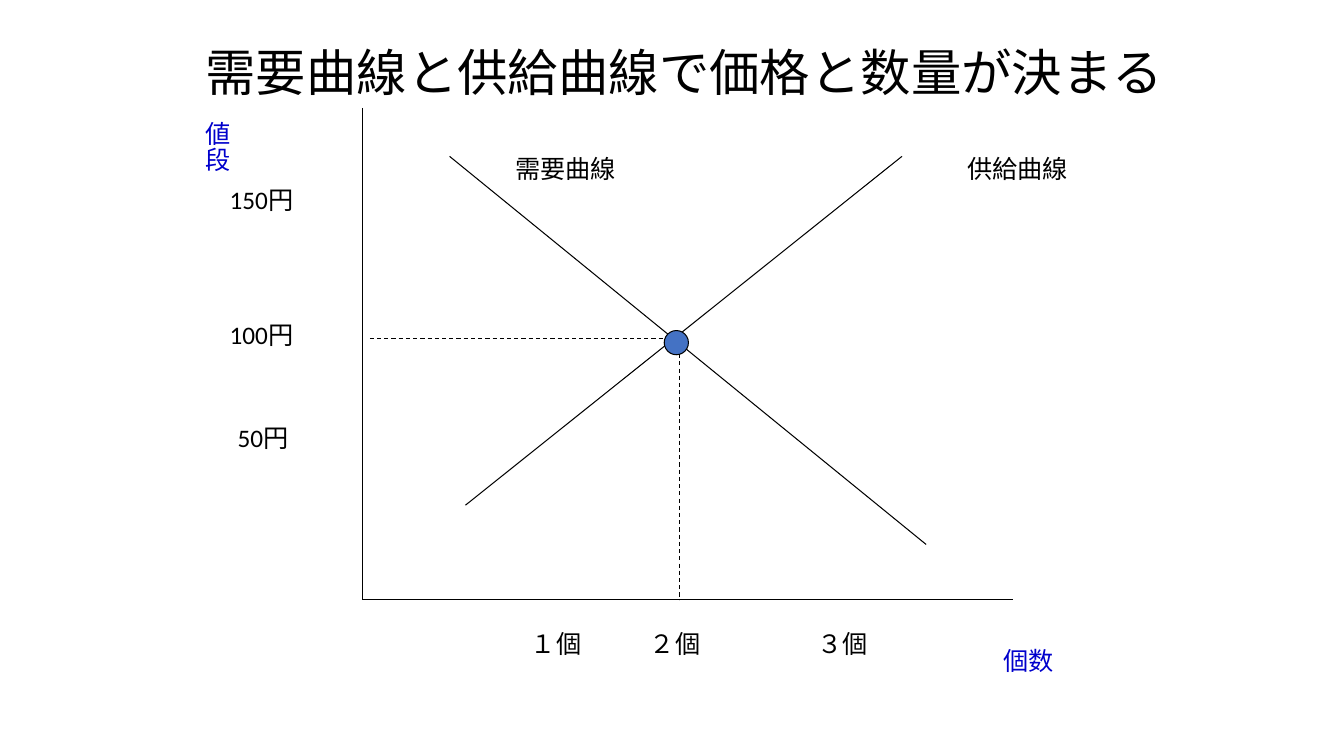
import pptx
import pptx.dml.color
import pptx.enum.dml
import pptx.enum.shapes
import pptx.enum.text
import pptx.oxml.ns
import pptx.util
from dataclasses import dataclass
from lxml import etree

Cm = pptx.util.Cm
Pt = pptx.util.Pt
Align = pptx.enum.text.PP_ALIGN


@dataclass(frozen=True)
class Theme:
    font: str = "Calibri"
    ink: str = "000000"
    axis_name: str = "0000CC"
    equilibrium: str = "4472C4"
    title_size: int = 36
    label_size: int = 18
    line_width: float = 0.75


@dataclass(frozen=True)
class Box:
    """A region of the slide, in centimetres."""
    left: float
    top: float
    width: float
    height: float

    def inside(self, x, y, width, height):
        return Box(self.left + x, self.top + y, width, height)

    def lengths(self):
        return [Cm(v) for v in (self.left, self.top, self.width, self.height)]


THEME = Theme()
LABEL_HEIGHT = 1.02


def rgb(code):
    return pptx.dml.color.RGBColor.from_string(code)


def add_label(slide, box, text, size=THEME.label_size, color=THEME.ink,
              align=Align.LEFT, vertical=False):
    frame = slide.shapes.add_textbox(*box.lengths()).text_frame
    frame.word_wrap = True
    frame.auto_size = pptx.enum.text.MSO_AUTO_SIZE.SHAPE_TO_FIT_TEXT
    frame.text = text
    if vertical:
        frame._txBody.bodyPr.set("vert", "eaVert")
    paragraph = frame.paragraphs[0]
    paragraph.alignment = align
    font = paragraph.runs[0].font
    font.name = THEME.font
    font.size = Pt(size)
    font.color.rgb = rgb(color)


def add_line(slide, box, start, end, dashed=False):
    """Draw a line between two points given relative to the box."""
    (x1, y1), (x2, y2) = start, end
    line = slide.shapes.add_connector(
        pptx.enum.shapes.MSO_CONNECTOR.STRAIGHT,
        Cm(box.left + x1), Cm(box.top + y1), Cm(box.left + x2), Cm(box.top + y2))
    line.line.color.rgb = rgb(THEME.ink)
    line.line.width = Pt(THEME.line_width)
    if dashed:
        line.line.dash_style = pptx.enum.dml.MSO_LINE.DASH
    etree.SubElement(line._element.spPr, pptx.oxml.ns.qn("a:effectLst"))


def add_title(slide, box):
    add_label(slide, box, "需要曲線と供給曲線で価格と数量が決まる", THEME.title_size)


def add_axes(slide, plot):
    origin = (0, plot.height)
    add_line(slide, plot, (0, 0), origin)
    add_line(slide, plot, origin, (plot.width, plot.height))

    # Axis names
    add_label(slide, plot.inside(14.58, 13.41, 4.39, LABEL_HEIGHT), "個数",
              color=THEME.axis_name, align=Align.CENTER)
    add_label(slide, plot.inside(-4.44, 0.1, 1.27, 1.8), "値段",
              color=THEME.axis_name, vertical=True)

    # Quantities below the horizontal axis
    for quantity, x in (("１個", 3.99), ("２個", 6.99), ("３個", 11.21)):
        add_label(slide, plot.inside(x, 13, 3, LABEL_HEIGHT), quantity)

    # Prices left of the vertical axis
    for price, x, y in (("150円", -3.6, 1.8), ("100円", -3.6, 5.2), ("50円", -3.4, 7.8)):
        add_label(slide, plot.inside(x, y, 3, LABEL_HEIGHT), price)


def add_curves(slide, plot):
    curves = (
        ("供給曲線", 14.99, (2.59, 10.01), (13.59, 1.22)),
        ("需要曲線", 3.59, (2.19, 1.22), (14.2, 11)),
    )
    for curve, label_x, start, end in curves:
        add_line(slide, plot, start, end)
        add_label(slide, plot.inside(label_x, 1.01, 4.4, LABEL_HEIGHT), curve)


def add_equilibrium(slide, plot):
    # Dashed guides to the price and the quantity
    add_line(slide, plot, (0.18, 5.81), (7.8, 5.81), dashed=True)
    add_line(slide, plot, (7.98, 6.02), (7.98, plot.height), dashed=True)

    # Crossing point
    point = slide.shapes.add_shape(pptx.enum.shapes.MSO_SHAPE.OVAL,
                                   *plot.inside(7.6, 5.61, 0.61, 0.61).lengths())
    point.shadow.inherit = False
    point.fill.solid()
    point.fill.fore_color.rgb = rgb(THEME.equilibrium)
    point.line.color.rgb = rgb(THEME.ink)
    point.line.width = Pt(THEME.line_width)


def main():
    presentation = pptx.Presentation()
    presentation.slide_width = Cm(33.87)
    presentation.slide_height = Cm(19.05)
    slide = presentation.slides.add_slide(presentation.slide_layouts[6])

    plot = Box(9.14, 2.72, 16.38, 12.39)
    add_title(slide, Box(4.93, 0.91, 24.71, 1.78))
    add_axes(slide, plot)
    add_curves(slide, plot)
    add_equilibrium(slide, plot)

    presentation.save("out.pptx")


if __name__ == "__main__":
    main()
